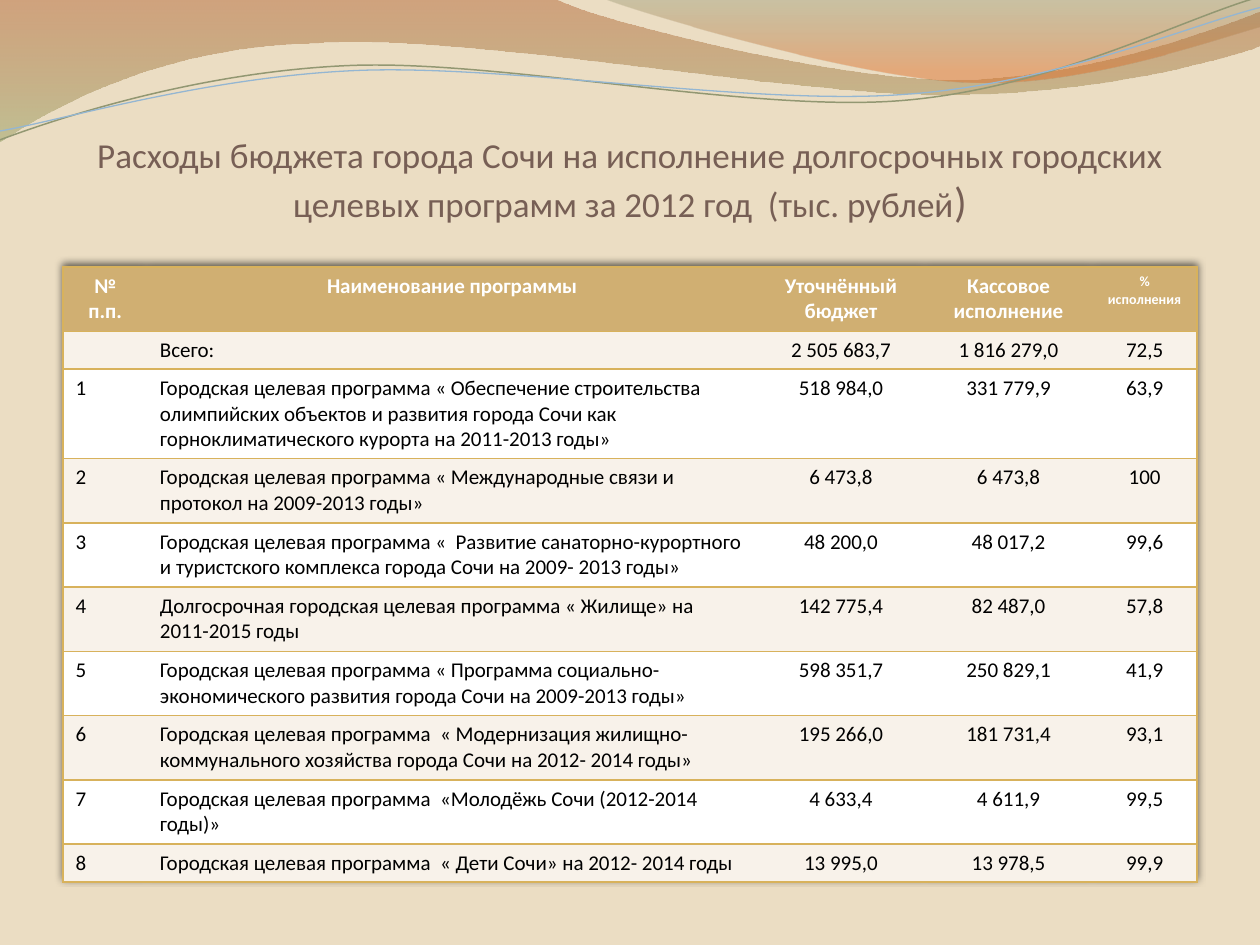
"""Build a slide with the 2012 spending on city target programmes."""
from dataclasses import dataclass
from itertools import islice
from math import cos, radians, sin
from typing import NamedTuple

from lxml.etree import SubElement
from pptx import Presentation
from pptx.dml.color import RGBColor
from pptx.enum.text import MSO_ANCHOR as Anchor, PP_ALIGN as Align
from pptx.oxml import parse_xml
from pptx.oxml.ns import nsdecls, qn
from pptx.util import Inches, Pt

Point = tuple[float, float]
Step = tuple[Point, ...]


@dataclass(frozen=True)
class Theme:
    font: str = "Calibri"
    background: str = "EBDDC3"
    title: str = "775F55"
    header: str = "D0AF72"
    header_text: str = "FFFFFF"
    text: str = "000000"
    bands: tuple[str, str] = ("F8F2EA", "FFFFFF")
    border: str = "D8B25C"
    title_size: float = 20
    bracket_size: float = 24
    table_size: float = 12
    small_size: float = 8


class Stop(NamedTuple):
    position: float
    color: str
    opacity: int


class Wave(NamedTuple):
    start: Point
    steps: list[Step]
    stops: tuple[Stop, Stop]


class Ribbon(NamedTuple):
    start: Point
    steps: list[Step]
    center: Point
    color: str
    width: float


class Row(NamedTuple):
    number: str
    name: str
    budget: str
    spent: str
    percent: str
    lines: int = 2


THEME = Theme()
TILT = 2.7
WAVES = [
    Wave((0, 0), [((4.4, -0.01),),
                  ((4.76, 0.17), (6.64, 0.63), (7.58, 0.63)),
                  ((8.53, 0.63), (9.58, 0.26), (10, 0.09)),
                  ((10.01, 0.36),),
                  ((9.83, 0.44), (8.7, 0.76), (7.46, 0.75)),
                  ((6.22, 0.75), (3.82, 0.28), (2.57, 0.34)),
                  ((1.29, 0.36), (0.46, 0.83), (-0.01, 1.13)),
                  ((0, 0),)],
         (Stop(0, "AF5C29", 45), Stop(1, "9DA66B", 55))),
    Wave((4.79, -0.01), [((5.09, 0.11), (6.82, 0.62), (7.69, 0.65)),
                         ((8.56, 0.69), (9.61, 0.32), (10, 0.21)),
                         ((10, 0),),
                         ((4.79, -0.01),)],
         (Stop(0, "7D835B", 30), Stop(0.8, "DD6B24", 45))),
]
RIBBONS = [
    Ribbon((0, 1.11), [((0.48, 0.93), (1.58, 0.57), (2.77, 0.52)),
                       ((3.95, 0.47), (5.93, 0.89), (7.13, 0.8)),
                       ((8.33, 0.71), (9.38, 0.15), (9.98, -0.02))],
           (4.99, 0.58), "929772", 0.85),
    Ribbon((0, 1.04), [((0.47, 0.96), (1.64, 0.61), (2.83, 0.56)),
                       ((4.03, 0.51), (5.97, 0.84), (7.17, 0.75)),
                       ((8.36, 0.67), (9.41, 0.21), (10, 0.06))],
           (5, 0.59), "94B6D2", 0.75),
]
TITLE = ("Расходы бюджета города Сочи на исполнение долгосрочных городских "
         "целевых программ за 2012 год  (тыс. рублей")
COLUMNS = (0.67, 4.84, 1.33, 1.33, 0.83)
HEIGHTS = {1: 0.3, 2: 0.51, 3: 0.71}
ROWS = [
    Row("№ п.п.", "Наименование программы", "Уточнённый бюджет", "Кассовое исполнение",
        "% исполнения"),
    Row("", "Всего:", "2 505 683,7", "1 816 279,0", "72,5", 1),
    Row("1", "Городская целевая программа « Обеспечение строительства олимпийских объектов и "
        "развития города Сочи как горноклиматического курорта на 2011-2013 годы»",
        "518 984,0", "331 779,9", "63,9", 3),
    Row("2", "Городская целевая программа « Международные связи и протокол на 2009-2013 годы»",
        "6 473,8", "6 473,8", "100"),
    Row("3", "Городская целевая программа «  Развитие санаторно-курортного и туристского "
        "комплекса города Сочи на 2009- 2013 годы»", "48 200,0", "48 017,2", "99,6"),
    Row("4", "Долгосрочная городская целевая программа « Жилище» на 2011-2015 годы",
        "142 775,4", "82 487,0", "57,8"),
    Row("5", "Городская целевая программа « Программа социально- экономического развития "
        "города Сочи на 2009-2013 годы»", "598 351,7", "250 829,1", "41,9"),
    Row("6", "Городская целевая программа  « Модернизация жилищно- коммунального хозяйства "
        "города Сочи на 2012- 2014 годы»", "195 266,0", "181 731,4", "93,1"),
    Row("7", "Городская целевая программа  «Молодёжь Сочи (2012-2014 годы)»",
        "4 633,4", "4 611,9", "99,5"),
    Row("8", "Городская целевая программа  « Дети Сочи» на 2012- 2014 годы",
        "13 995,0", "13 978,5", "99,9", 1),
]


def rgb(value: str) -> RGBColor:
    return RGBColor.from_string(value)


def turn(point: Point, center: Point, degrees: float) -> Point:
    angle = radians(degrees)
    x, y = point[0] - center[0], point[1] - center[1]
    return (center[0] + x * cos(angle) - y * sin(angle),
            center[1] + x * sin(angle) + y * cos(angle))


def draw_outline(page, start: Point, steps: list[Step], closed: bool):
    builder = page.shapes.build_freeform(Inches(start[0]), Inches(start[1]))
    builder.add_line_segments([(Inches(x), Inches(y)) for step in steps for x, y in step],
                              close=closed)
    shape = builder.convert_to_shape()
    shape.shadow.inherit = False
    lines = iter(list(shape.element.spPr.iter(qn("a:lnTo"))))
    for step in steps:
        first, *others = islice(lines, len(step))
        if others:
            first.tag = qn("a:cubicBezTo")
        for other in others:
            first.append(other[0])
            other.getparent().remove(other)
    return shape


def draw_wave(page, wave: Wave) -> None:
    shape = draw_outline(page, wave.start, wave.steps, True)
    shape.line.fill.background()
    shape.fill.gradient()
    shape.fill.gradient_angle = 270
    for target, stop in zip(shape.fill.gradient_stops, wave.stops):
        target.color.rgb = rgb(stop.color)
        target.position = stop.position
    for color, stop in zip(shape.element.spPr.iter(qn("a:srgbClr")), wave.stops):
        SubElement(color, qn("a:alpha"), val=str(stop.opacity * 1000))


def draw_ribbon(page, ribbon: Ribbon) -> None:
    start = turn(ribbon.start, ribbon.center, TILT)
    steps = [tuple(turn(point, ribbon.center, TILT) for point in step) for step in ribbon.steps]
    shape = draw_outline(page, start, steps, False)
    shape.rotation = -TILT
    shape.fill.background()
    shape.line.color.rgb = rgb(ribbon.color)
    shape.line.width = Pt(ribbon.width)


def add_span(para, text: str, size: float, color: str, bold: bool = False) -> None:
    span = para.add_run()
    span.text = text
    span.font.name, span.font.size, span.font.bold = THEME.font, Pt(size), bold
    span.font.color.rgb = rgb(color)


def draw_title(page) -> None:
    box = page.shapes.add_textbox(Inches(0.5), Inches(0.76), Inches(9), Inches(1.03))
    frame = box.text_frame
    frame.word_wrap, frame.vertical_anchor = True, Anchor.BOTTOM
    frame.margin_left = frame.margin_right = frame.margin_bottom = 0
    para = frame.paragraphs[0]
    para.alignment = Align.CENTER
    add_span(para, TITLE, THEME.title_size, THEME.title)
    add_span(para, ")", THEME.bracket_size, THEME.title)


def set_borders(cell, sides: dict[str, bool]) -> None:
    for index, (side, visible) in enumerate(sides.items()):
        paint = (f'<a:solidFill><a:srgbClr val="{THEME.border}"/></a:solidFill>'
                 if visible else "<a:noFill/>")
        line = f'<a:{side} {nsdecls("a")} w="{Pt(1)}">{paint}</a:{side}>'
        cell._tc.get_or_add_tcPr().insert(index, parse_xml(line))


def fill_cell(cell, text: str, row: int, column: int) -> None:
    header, last = row == 0, column == len(COLUMNS) - 1
    cell.fill.solid()
    cell.fill.fore_color.rgb = rgb(THEME.header if header else THEME.bands[(row - 1) % 2])
    set_borders(cell, {"lnL": column == 0, "lnR": last, "lnT": True, "lnB": True})
    para = cell.text_frame.paragraphs[0]
    para.alignment = Align.CENTER if header or column > 1 else Align.LEFT
    size = THEME.small_size if header and last else THEME.table_size
    if text:
        add_span(para, text, size, THEME.header_text if header else THEME.text, header)
    else:
        SubElement(para._p, qn("a:endParaRPr"), sz=str(int(size * 100)))


def draw_table(page) -> None:
    heights = [Inches(HEIGHTS[row.lines]) for row in ROWS]
    table = page.shapes.add_table(len(ROWS), len(COLUMNS), Inches(0.5), Inches(2.12),
                                  Inches(sum(COLUMNS)), sum(heights)).table
    table._tbl.tblPr.insert(0, parse_xml(
        f'<a:effectLst {nsdecls("a")}><a:outerShdw blurRad="{Pt(4)}" dist="{Pt(2)}" '
        'dir="16200000"><a:srgbClr val="000000"><a:alpha val="60000"/></a:srgbClr>'
        '</a:outerShdw></a:effectLst>'))
    for column, width in zip(table.columns, COLUMNS):
        column.width = Inches(width)
    for row, (entry, height) in enumerate(zip(ROWS, heights)):
        table.rows[row].height = height
        for column, text in enumerate(entry[:len(COLUMNS)]):
            fill_cell(table.cell(row, column), text, row, column)


def main() -> None:
    deck = Presentation()
    deck.slide_width, deck.slide_height = Inches(10), Inches(7.5)
    page = deck.slides.add_slide(deck.slide_layouts[6])
    page.background.fill.solid()
    page.background.fill.fore_color.rgb = rgb(THEME.background)
    for wave in WAVES:
        draw_wave(page, wave)
    for ribbon in RIBBONS:
        draw_ribbon(page, ribbon)
    draw_title(page)
    draw_table(page)
    deck.save("out.pptx")


if __name__ == "__main__":
    main()
